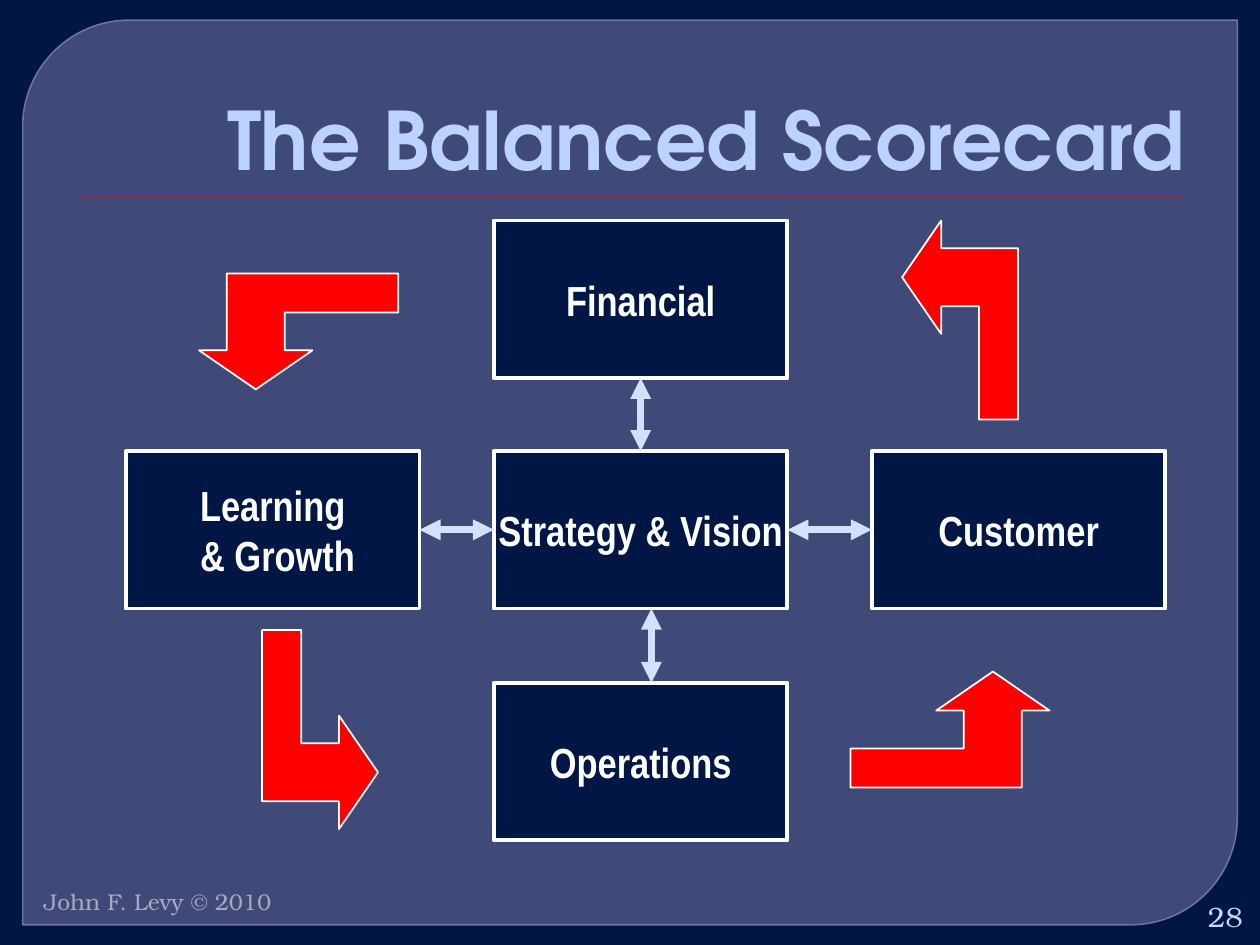
from dataclasses import dataclass

from lxml import etree
from pptx import Presentation
from pptx.dml.color import RGBColor
from pptx.enum import shapes, text
from pptx.oxml import ns
from pptx.util import Inches, Pt


@dataclass(frozen=True)
class Theme:
    night: str = "001644"
    panel: str = "636794"
    panel_edge: str = "797DAA"
    red: str = "FF0000"
    white: str = "FFFFFF"
    title: str = "BDD3FF"
    link: str = "D2E1FF"
    number: str = "C9D7F4"
    footer: str = "A7A9BF"
    heading_font: str = "TeX Gyre Adventor"
    small_font: str = "TeX Gyre Bonum"
    box_font: str = "Arial Narrow"
    title_size: int = 46
    box_size: int = 24
    number_size: int = 16
    footer_size: int = 13


THEME = Theme()
TOP, LEFT, BOTTOM, RIGHT = range(4)
BOX_WIDTH, BOX_HEIGHT = 2.33, 1.25
COLUMNS = (1, 3.92, 6.92)
ROWS = (1.75, 3.58, 5.42)
PERSPECTIVES = {  # label: (column, row)
    "Financial": (1, 0),
    "Learning\n & Growth": (0, 1),
    "Customer": (2, 1),
    "Operations": (1, 2),
    "Strategy & Vision": (1, 1),
}
ARROW_WIDTH, ARROW_HEIGHT = 1.58, 0.92
ARROW_OUTLINE = (
    (1.13, 0), (0.68, 0.31), (0.9, 0.31), (0.9, 0.61), (0, 0.61),
    (0, 0.92), (1.36, 0.92), (1.36, 0.31), (1.58, 0.31),
)
CYCLE = ((6.75, 5.33, 0), (1.75, 5.33, 90), (1.58, 2.17, 180), (6.83, 2.08, 270))


def paint(shape, fill, line=None, width=1):
    shape.shadow.inherit = False
    shape.fill.solid()
    shape.fill.fore_color.rgb = RGBColor.from_string(fill)
    if line is None:
        shape.line.fill.background()
    else:
        shape.line.color.rgb = RGBColor.from_string(line)
        shape.line.width = Pt(width)


def set_opacity(fill_parent, percent):
    color = fill_parent.find(ns.qn("a:solidFill"))[0]
    etree.SubElement(color, ns.qn("a:alpha"), val=str(percent * 1000))


def write(shape, words, font, size, color, align, bold=False,
          anchor=text.MSO_ANCHOR.MIDDLE, wrap=True):
    frame = shape.text_frame
    frame.text = words
    frame.word_wrap = wrap
    frame.vertical_anchor = anchor
    for para in frame.paragraphs:
        para.alignment = align
        for span in para.runs:
            span.font.name = font
            span.font.size = Pt(size)
            span.font.bold = bold
            span.font.color.rgb = RGBColor.from_string(color)


def add_panel(page, left, top, width, height):
    panel = page.shapes.add_shape(
        shapes.MSO_SHAPE.ROUND_2_DIAG_RECTANGLE,
        Inches(left), Inches(top), Inches(width), Inches(height))
    panel.adjustments[0] = 0.118
    panel.adjustments[1] = 0
    paint(panel, THEME.panel, THEME.panel_edge, 0.87)
    properties = panel.element.spPr
    set_opacity(properties, 65)
    set_opacity(properties.find(ns.qn("a:ln")), 88)


def add_title(page, left, top, width, height):
    """Title with the thin red rule below it."""
    rule = page.shapes.add_shape(
        shapes.MSO_SHAPE.RECTANGLE,
        Inches(left + 0.14), Inches(top + height + 0.03), Inches(8.75), Inches(0.01))
    paint(rule, THEME.red)
    box = page.shapes.add_textbox(
        Inches(left), Inches(top), Inches(width), Inches(height))
    write(box, "The Balanced Scorecard", THEME.heading_font, THEME.title_size,
          THEME.title, text.PP_ALIGN.RIGHT, bold=True, anchor=text.MSO_ANCHOR.BOTTOM)


def add_perspective(page, label, left, top):
    box = page.shapes.add_shape(
        shapes.MSO_SHAPE.RECTANGLE,
        Inches(left), Inches(top), Inches(BOX_WIDTH), Inches(BOX_HEIGHT))
    paint(box, THEME.night, THEME.white, 2.25)
    write(box, label, THEME.box_font, THEME.box_size, THEME.white,
          text.PP_ALIGN.CENTER, bold=True, wrap=False)
    return box


def add_link(page, start=(0, 0), end=(0, 0)):
    """Line with an arrowhead at both ends."""
    link = page.shapes.add_connector(
        shapes.MSO_CONNECTOR.STRAIGHT, *(Inches(value) for value in start + end))
    link.line.color.rgb = RGBColor.from_string(THEME.link)
    link.line.width = Pt(4)
    for tag in ("a:headEnd", "a:tailEnd"):
        etree.SubElement(link.line._get_or_add_ln(), ns.qn(tag), type="triangle")
    etree.SubElement(link.element.spPr, ns.qn("a:effectLst"))
    return link


def add_scorecard(page):
    boxes = {label: add_perspective(page, label, COLUMNS[column], ROWS[row])
             for label, (column, row) in PERSPECTIVES.items()}
    center = boxes["Strategy & Vision"]
    joins = (
        (boxes["Learning\n & Growth"], RIGHT, center, LEFT),
        (center, RIGHT, boxes["Customer"], LEFT),
        (center, TOP, boxes["Financial"], BOTTOM),
    )
    for first, first_side, second, second_side in joins:
        link = add_link(page)
        link.begin_connect(first, first_side)
        link.end_connect(second, second_side)
    add_link(page, (5.17, ROWS[2]), (5.17, ROWS[1] + BOX_HEIGHT))


def add_cycle_arrow(page, left, top, turn):
    points = [(Inches(left + x), Inches(top + y)) for x, y in ARROW_OUTLINE]
    builder = page.shapes.build_freeform(*points[0])
    builder.add_line_segments(points[1:], close=True)
    arrow = builder.convert_to_shape()
    arrow.rotation = turn
    paint(arrow, THEME.red, THEME.white)


def add_page_number(page, left, top, width, height):
    box = page.shapes.add_textbox(
        Inches(left), Inches(top), Inches(width), Inches(height))
    write(box, "28", THEME.small_font, THEME.number_size, THEME.number,
          text.PP_ALIGN.RIGHT)


def add_footer(page, left, top, width, height):
    box = page.shapes.add_textbox(
        Inches(left), Inches(top), Inches(width), Inches(height))
    write(box, "John F. Levy © 2010", THEME.small_font, THEME.footer_size,
          THEME.footer, text.PP_ALIGN.LEFT, anchor=text.MSO_ANCHOR.TOP)


def main():
    deck = Presentation()
    deck.slide_width, deck.slide_height = Inches(10), Inches(7.5)
    page = deck.slides.add_slide(deck.slide_layouts[6])
    page.background.fill.solid()
    page.background.fill.fore_color.rgb = RGBColor.from_string(THEME.night)
    add_panel(page, 0.18, 0.16, 9.64, 7.18)
    add_title(page, 0.5, 0.28, 9, 1.25)
    add_page_number(page, 9.45, 7.12, 0.51, 0.3)
    add_scorecard(page)
    for left, top, turn in CYCLE:
        add_cycle_arrow(page, left, top, turn)
    add_footer(page, 0.25, 7, 4.61, 0.3)
    deck.save("out.pptx")


if __name__ == "__main__":
    main()
